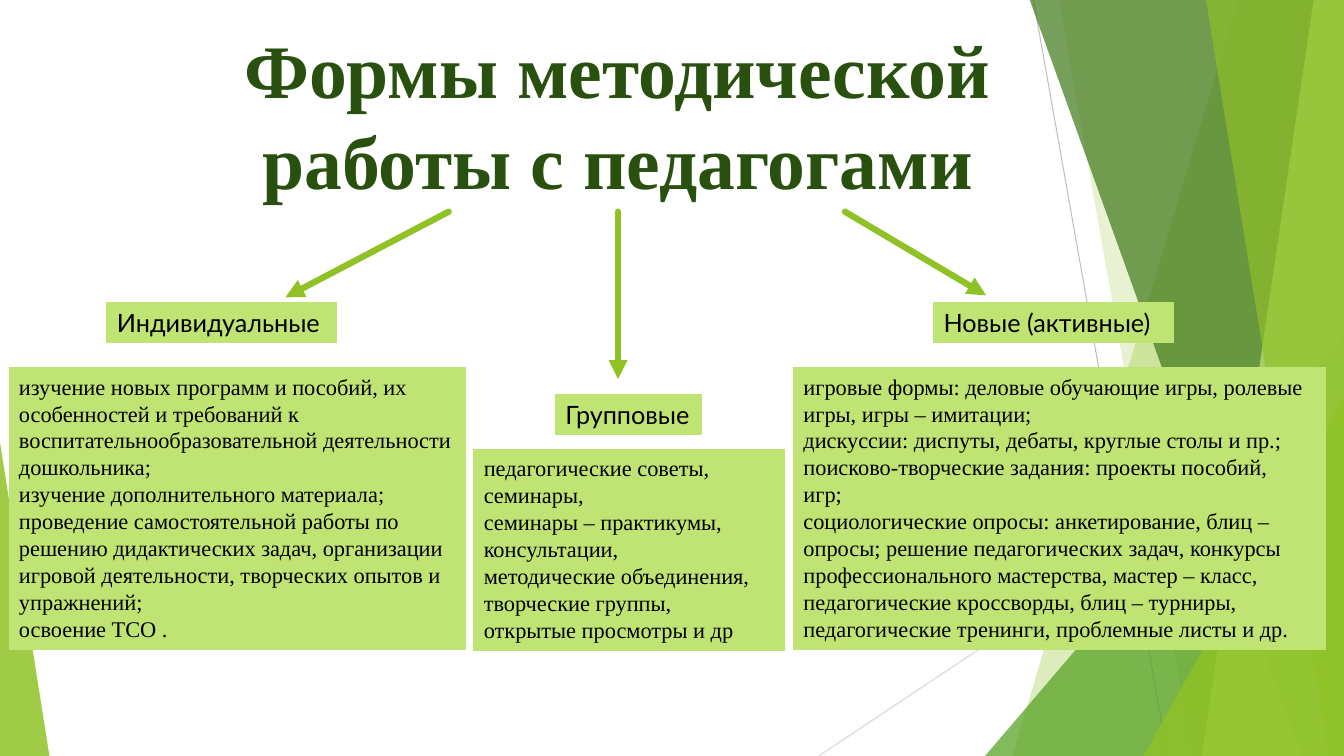
from lxml.etree import SubElement
from pptx import Presentation
from pptx.dml.color import RGBColor
from pptx.enum.shapes import MSO_CONNECTOR as CONN, MSO_SHAPE as SHAPE
from pptx.enum.text import MSO_ANCHOR as ANCHOR, MSO_AUTO_SIZE as FIT, PP_ALIGN as ALIGN
from pptx.oxml.ns import qn
from pptx.util import Inches, Pt

WIDTH, HEIGHT = 13.33, 7.5
LIME = RGBColor(0x90, 0xC2, 0x26)
PALE_LIME = RGBColor(0xC0, 0xE4, 0x74)
GREEN = RGBColor(0x54, 0xA0, 0x21)
DARK_GREEN = RGBColor(0x3F, 0x78, 0x19)
TITLE_GREEN = RGBColor(0x2A, 0x50, 0x10)
GREY = RGBColor(0xBF, 0xBF, 0xBF)
LIGHT_GREY = RGBColor(0xD9, 0xD9, 0xD9)
BLACK = RGBColor(0, 0, 0)
SERIF, SANS = "Times New Roman", "Lato"

INDIVIDUAL = [
    "изучение новых программ и пособий, их",
    "особенностей и требований к воспитательнообразовательной деятельности дошкольника;",
    "изучение дополнительного материала;",
    "проведение самостоятельной работы по",
    "решению дидактических задач, организации",
    "игровой деятельности, творческих опытов и",
    "упражнений;",
    "освоение ТСО .",
]
GROUP = [
    "педагогические советы,",
    "семинары,",
    "семинары – практикумы,",
    "консультации,",
    "методические объединения,",
    "творческие группы,",
    "открытые просмотры и др",
]
ACTIVE = [
    "игровые формы: деловые обучающие игры, ролевые",
    "игры, игры – имитации;",
    "дискуссии: диспуты, дебаты, круглые столы и пр.;",
    "поисково-творческие задания: проекты пособий,",
    "игр;",
    "социологические опросы: анкетирование, блиц –",
    "опросы; решение педагогических задач, конкурсы",
    "профессионального мастерства, мастер – класс,",
    "педагогические кроссворды, блиц – турниры,",
    "педагогические тренинги, проблемные листы и др.",
]


def write_text(sp, lines, size, font=SERIF, color=BLACK, bold=False,
               align=ALIGN.LEFT, wrap=True):
    tf = sp.text_frame
    tf.word_wrap = wrap
    tf.auto_size = FIT.SHAPE_TO_FIT_TEXT
    tf.vertical_anchor = ANCHOR.TOP
    for i, line in enumerate(lines):
        p = tf.add_paragraph() if i else tf.paragraphs[0]
        p.alignment = align
        r = p.add_run()
        r.text = line
        r.font.name, r.font.size, r.font.bold = font, Pt(size), bold
        r.font.color.rgb = color


class SlideBuilder:
    def __init__(self, slide):
        self.shapes = slide.shapes

    def paint(self, sp, color, opacity):
        """Fill a decorative shape with a translucent colour and no outline."""
        sp.shadow.inherit = False
        sp.line.fill.background()
        sp.fill.solid()
        sp.fill.fore_color.rgb = color
        clr = sp.fill._xPr.find(qn("a:solidFill"))[0]
        SubElement(clr, qn("a:alpha"), val=str(opacity * 1000))

    def band(self, top_left, top_right, bottom_left, color, opacity):
        """Draw a full-height band that ends at the slide's right edge."""
        top = Inches(-0.01)
        fb = self.shapes.build_freeform(Inches(top_left), top)
        fb.add_line_segments([
            (Inches(top_right), top),
            (Inches(WIDTH), Inches(HEIGHT)),
            (Inches(bottom_left), Inches(HEIGHT)),
        ])
        self.paint(fb.convert_to_shape(), color, opacity)

    def triangle(self, left, top, width, apex, color, opacity):
        """Draw a triangle standing on the slide's bottom edge."""
        sp = self.shapes.add_shape(SHAPE.ISOSCELES_TRIANGLE, Inches(left), Inches(top),
                                   Inches(width), Inches(HEIGHT - top))
        sp.adjustments[0] = apex
        self.paint(sp, color, opacity)

    def line(self, start, end, color, weight, arrow=False):
        cx = self.shapes.add_connector(CONN.STRAIGHT, *map(Inches, start + end))
        cx.line.color.rgb = color
        cx.line.width = Pt(weight)
        SubElement(cx._element.spPr, qn("a:effectLst"))
        if arrow:
            ln = cx.line._get_or_add_ln()
            ln.set("cap", "rnd")
            SubElement(ln, qn("a:tailEnd"), type="triangle")

    def title(self, text, left, top, width, height):
        sp = self.shapes.add_textbox(*map(Inches, (left, top, width, height)))
        write_text(sp, [text], 54, color=TITLE_GREEN, bold=True, align=ALIGN.CENTER)

    def box(self, lines, left, top, width, height, **text_format):
        sp = self.shapes.add_shape(SHAPE.RECTANGLE,
                                   *map(Inches, (left, top, width, height)))
        sp.shadow.inherit = False
        sp.fill.solid()
        sp.fill.fore_color.rgb = sp.line.color.rgb = PALE_LIME
        sp.line.width = Pt(0.75)
        write_text(sp, lines, **text_format)

    def label(self, text, left, top, width):
        self.box([text], left, top, width, 0.4, size=18, font=SANS, wrap=False)


def draw_background(s):
    s.line((10.25, 0), (11.58, HEIGHT), GREY, 0.75)
    s.line((WIDTH, 4.03), (8.12, HEIGHT), LIGHT_GREY, 0.75)
    s.band(12.28, WIDTH, 10.04, LIME, 30)
    s.band(10.5, WIDTH, 11.83, LIME, 20)
    s.triangle(9.77, 3.33, 3.56, 1, GREEN, 72)
    s.band(10.21, WIDTH, 12.91, DARK_GREEN, 70)
    s.band(13.03, WIDTH, 11.92, PALE_LIME, 70)
    s.band(11.96, WIDTH, 13.18, LIME, 65)
    s.triangle(11.34, 3.93, 1.99, 1, LIME, 80)
    s.triangle(0, 4.39, 0.49, 0, LIME, 85)


def main():
    prs = Presentation()
    prs.slide_width, prs.slide_height = Inches(WIDTH), Inches(HEIGHT)
    s = SlideBuilder(prs.slides.add_slide(prs.slide_layouts[6]))
    draw_background(s)
    s.title("Формы методической работы с педагогами", 1.06, 0.18, 10.13, 1.92)

    s.label("Групповые", 5.51, 3.91, 1.45)
    s.label("Индивидуальные", 1.06, 3, 2.28)
    s.label("Новые (активные)", 9.26, 3, 2.38)

    s.box(GROUP, 4.7, 4.46, 3.08, 1.99, size=16)
    s.box(INDIVIDUAL, 0.09, 3.65, 4.53, 2.79, size=16)
    s.box(ACTIVE, 7.87, 3.65, 5.28, 2.79, size=16)

    for x, tip in ((4.45, (2.83, 2.95)), (6.13, (6.13, 3.76)), (8.38, (9.78, 2.93))):
        s.line((x, 2.1), tip, LIME, 4.5, arrow=True)

    prs.save("out.pptx")


if __name__ == "__main__":
    main()
